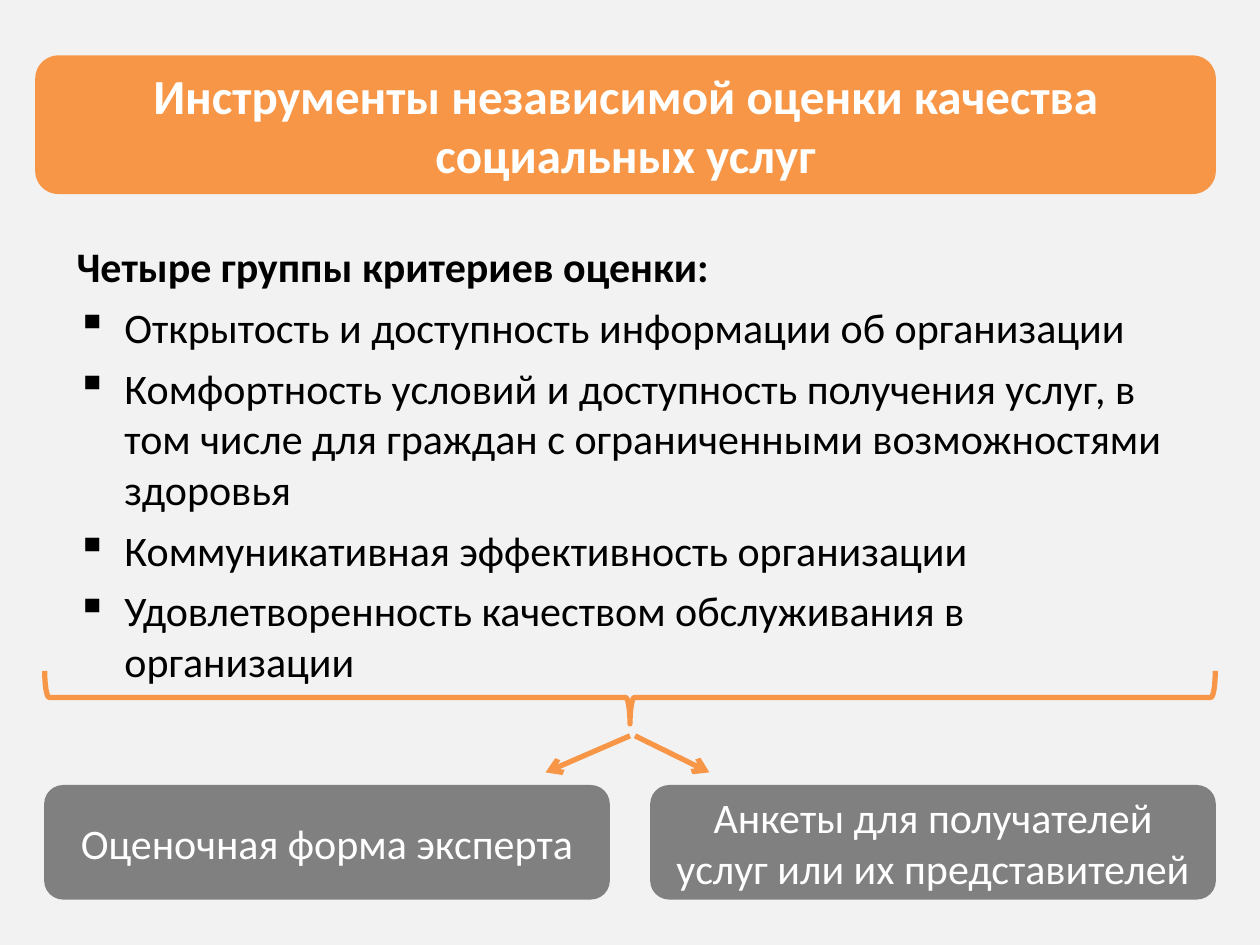
from typing import NamedTuple

from lxml.etree import SubElement
from pptx import Presentation
from pptx.dml.color import RGBColor
from pptx.enum.shapes import MSO_CONNECTOR, MSO_SHAPE
from pptx.enum.text import MSO_ANCHOR, PP_ALIGN
from pptx.oxml.ns import qn
from pptx.util import Inches, Pt

WIDTH, HEIGHT = Inches(10), Inches(7.5)
COLS, ROWS = 100, 75
ORANGE, GRAY, WHITE, BLACK, PALE = "F79646", "808080", "FFFFFF", "000000", "F2F2F2"
INDENT = Inches(0.38)


class Box(NamedTuple):
    """A filled rounded box with centred text, placed in grid units."""
    text: str
    col: float
    row: float
    cols: float
    rows: float
    fill: str
    size: int
    bold: bool = False


class Arrow(NamedTuple):
    """An arrow between two grid points."""
    col: float
    row: float
    end_col: float
    end_row: float


BOXES = [
    Box("Инструменты независимой оценки качества социальных услуг",
        2.8, 4.4, 93.7, 11, ORANGE, 28, True),
    Box("Оценочная форма эксперта", 3.5, 62.3, 44.9, 9.1, GRAY, 24),
    Box("Анкеты для получателей услуг или их представителей",
        51.6, 62.3, 44.9, 9.1, GRAY, 24),
]
ARROWS = [Arrow(50, 58.4, 43.3, 61.3), Arrow(50.4, 58.4, 56.3, 61.3)]
HEADING = "Четыре группы критериев оценки:"
CRITERIA = [
    "Открытость и доступность информации об организации",
    "Комфортность условий и доступность получения услуг, в том числе "
    "для граждан с ограниченными возможностями здоровья",
    "Коммуникативная эффективность организации",
    "Удовлетворенность качеством обслуживания в организации",
]


def x(cols: float) -> int:
    """Convert grid columns to a length."""
    return round(WIDTH * cols / COLS)


def y(rows: float) -> int:
    """Convert grid rows to a length."""
    return round(HEIGHT * rows / ROWS)


def rgb(color: str) -> RGBColor:
    """Convert a hex string to a colour."""
    return RGBColor.from_string(color)


def write(p, text: str, color: str, size: int, bold: bool = False) -> None:
    """Add one formatted run to a paragraph."""
    r = p.add_run()
    r.text = text
    for name, value in {"name": "Calibri", "size": Pt(size), "bold": bold}.items():
        setattr(r.font, name, value)
    r.font.color.rgb = rgb(color)


def draw_box(s, box: Box) -> None:
    """Draw a rounded box and its text."""
    sp = s.shapes.add_shape(MSO_SHAPE.ROUNDED_RECTANGLE, x(box.col), y(box.row),
                            x(box.cols), y(box.rows))
    sp.shadow.inherit = False
    sp.fill.solid()
    sp.fill.fore_color.rgb = rgb(box.fill)
    sp.line.fill.background()
    tf = sp.text_frame
    for name, value in {"word_wrap": True, "vertical_anchor": MSO_ANCHOR.MIDDLE}.items():
        setattr(tf, name, value)
    p = tf.paragraphs[0]
    p.alignment = PP_ALIGN.CENTER
    write(p, box.text, WHITE, box.size, box.bold)


def draw_criteria(s) -> None:
    """Draw the heading and the bulleted criteria."""
    tf = s.shapes.add_textbox(x(5.1), y(18.6), x(90.6), y(40.7)).text_frame
    tf.word_wrap = True
    write(tf.paragraphs[0], HEADING, BLACK, 24, True)
    for text in CRITERIA:
        p = tf.add_paragraph()
        p.space_before = Pt(6)
        pPr = p._p.get_or_add_pPr()
        for name, value in {"marL": INDENT, "indent": -INDENT}.items():
            pPr.set(name, str(int(value)))
        SubElement(pPr, qn("a:buChar")).set("char", "▪")
        write(p, text, BLACK, 24)


def set_line(sp) -> None:
    """Give a shape or connector the orange outline."""
    sp.line.color.rgb = rgb(ORANGE)
    sp.line.width = Pt(3)


def draw_brace(s) -> None:
    """Draw the brace that opens upwards under the criteria."""
    sp = s.shapes.add_shape(MSO_SHAPE.RIGHT_BRACE, x(47.9), y(8.9), x(4.2), y(92.9))
    sp.rotation = 90
    sp.shadow.inherit = False
    sp.fill.background()
    set_line(sp)


def draw_arrow(s, arrow: Arrow) -> None:
    """Draw an orange arrow with an open head."""
    cx = s.shapes.add_connector(MSO_CONNECTOR.STRAIGHT, x(arrow.col), y(arrow.row),
                                x(arrow.end_col), y(arrow.end_row))
    set_line(cx)
    SubElement(cx.line._get_or_add_ln(), qn("a:tailEnd")).set("type", "arrow")
    SubElement(cx._element.spPr, qn("a:effectLst"))


def main() -> None:
    """Build and save the slide."""
    prs = Presentation()
    prs.slide_width, prs.slide_height = WIDTH, HEIGHT
    s = prs.slides.add_slide(prs.slide_layouts[6])
    s.background.fill.solid()
    s.background.fill.fore_color.rgb = rgb(PALE)
    title, *forms = BOXES
    draw_box(s, title)
    draw_criteria(s)
    draw_brace(s)
    for arrow in ARROWS:
        draw_arrow(s, arrow)
    for form in forms:
        draw_box(s, form)
    prs.save("out.pptx")


if __name__ == "__main__":
    main()
